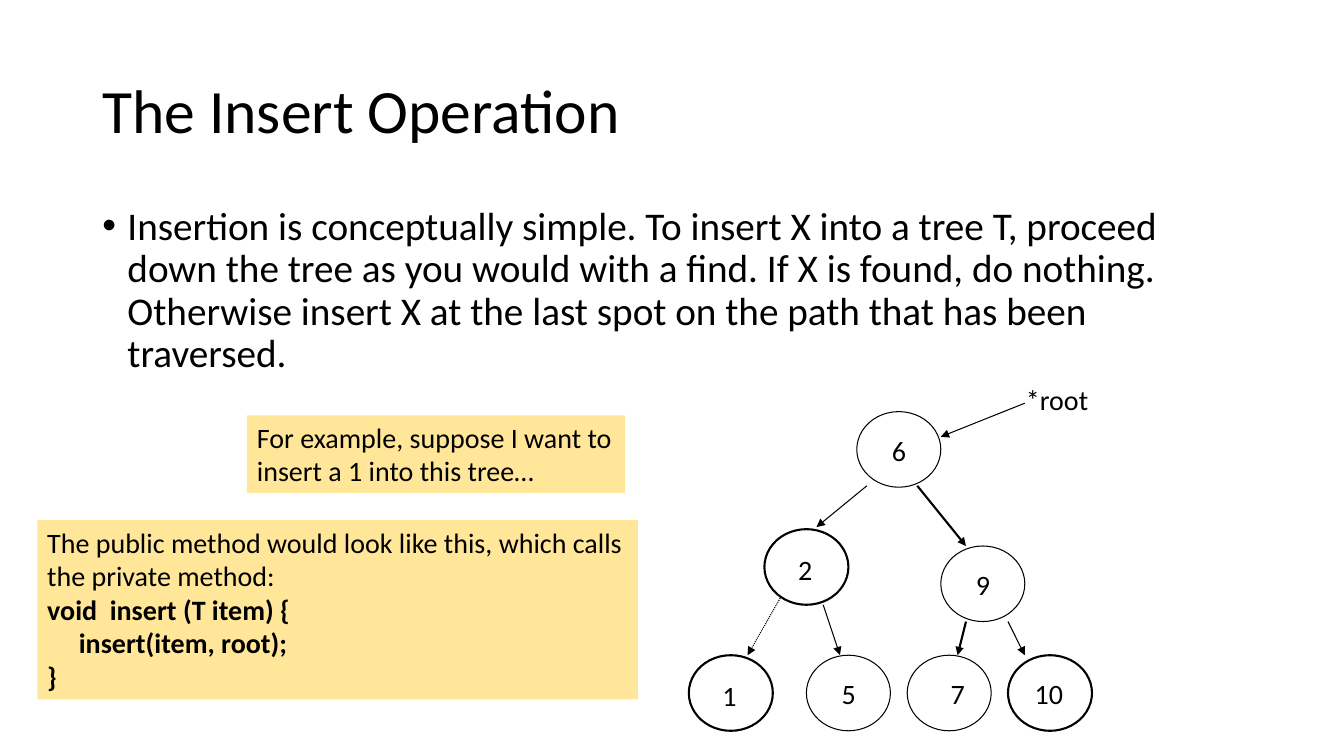
from lxml import etree
from pptx import Presentation
from pptx import util as u
from pptx.dml.color import RGBColor
from pptx.enum import dml, shapes, text
from pptx.oxml.ns import qn

COLORS = {"ink": "000000", "note": "FFE699"}
FONT = "Calibri"
NODE_W, NODE_H = 60, 54
THIN, THICK = 0.75, 1.5
LABEL_SIZE = 20

TITLE = "The Insert Operation"
BODY = ("Insertion is conceptually simple. To insert X into a tree T, proceed down the tree "
        "as you would with a find. If X is found, do nothing. Otherwise insert X at the last "
        "spot on the path that has been traversed.")

# value: (node left, node top, outline, label left, label top)
NODES = {
    "6": (612, 294, THIN, 630, 306),
    "2": (546, 378, THICK, 563, 391),
    "9": (672, 390, THIN, 690, 402),
    "1": (492, 468, THICK, 509, 481),
    "5": (576, 468, THIN, 594, 480),
    "7": (648, 468, THIN, 672, 480),
    "10": (720, 468, THICK, 732, 480),
}

# (from x, from y, to x, to y, width, dotted)
ARROWS = [
    (732, 288, 672, 312, THIN, False),
    (619.2, 347, 583.2, 376.5, THIN, False),
    (655.2, 347, 690, 390, THICK, False),
    (558, 426, 534, 468, THIN, True),
    (588, 432, 600, 468, THIN, False),
    (690, 444, 684, 468, THICK, False),
    (720, 444, 732, 468, THIN, False),
]

# (box, wrap, lines as (text, bold, indent))
NOTES = [
    ((176.4, 296.64, 270, 55.44), False, [
        ("For example, suppose I want to", False, 0),
        ("insert a 1 into this tree…", False, 0),
    ]),
    ((26.64, 371.52, 429.12, 128.16), True, [
        ("The public method would look like this, which calls the private method:", False, 0),
        ("void  insert (T item) {", True, 0),
        ("insert(item, root);", True, 22.6),
        ("}", True, 0),
    ]),
]

deck = Presentation()
deck.slide_width, deck.slide_height = u.Pt(960), u.Pt(540)
page = deck.slides.add_slide(deck.slide_layouts[6])


def color(name):
    return RGBColor.from_string(COLORS[name])


def add_text(box_at, lines, size, wrap=True):
    """Add a text box; each line is (text, bold, indent)."""
    box = page.shapes.add_textbox(*map(u.Pt, box_at))
    frame = box.text_frame
    frame.word_wrap = wrap
    for number, (words, bold, indent) in enumerate(lines):
        para = frame.add_paragraph() if number else frame.paragraphs[0]
        if indent:
            para._p.get_or_add_pPr().set("marL", str(u.Pt(indent)))
        span = para.add_run()
        span.text = words
        span.font.name, span.font.size, span.font.bold = FONT, u.Pt(size), bold
        span.font.color.rgb = color("ink")
    return box


def add_label(words, left, top, width):
    add_text((left, top, width, 31.5), [(words, False, 0)], LABEL_SIZE, wrap=False)


# Title
title = add_text((66, 28.8, 828, 104.4), [(TITLE, False, 0)], 44)
title.text_frame.vertical_anchor = text.MSO_ANCHOR.MIDDLE
title.text_frame.paragraphs[0].line_spacing = 0.9

# Bulleted body
body = add_text((66, 144, 828, 342.72), [(BODY, False, 18)], 28)
para = body.text_frame.paragraphs[0]
para.line_spacing, para.space_before = 0.9, u.Pt(10)
props = para._p.get_or_add_pPr()
props.set("indent", str(u.Pt(-18)))
etree.SubElement(props, qn("a:buFont")).set("typeface", "Arial")
etree.SubElement(props, qn("a:buChar")).set("char", "•")

# Tree arrows
for x1, y1, x2, y2, width, dotted in ARROWS:
    arrow = page.shapes.add_connector(
        shapes.MSO_CONNECTOR.STRAIGHT, *map(u.Pt, (x1, y1, x2, y2)))
    arrow.line.color.rgb = color("ink")
    arrow.line.width = u.Pt(width)
    if dotted:
        arrow.line.dash_style = dml.MSO_LINE.ROUND_DOT
    etree.SubElement(arrow.line._get_or_add_ln(), qn("a:tailEnd")).set("type", "triangle")
    etree.SubElement(arrow._element.spPr, qn("a:effectLst"))

# Tree nodes and their labels
for value, (left, top, outline, label_left, label_top) in NODES.items():
    node = page.shapes.add_shape(
        shapes.MSO_SHAPE.OVAL, *map(u.Pt, (left, top, NODE_W, NODE_H)))
    node.shadow.inherit = False
    node.fill.background()
    node.line.color.rgb = color("ink")
    node.line.width = u.Pt(outline)
    add_label(value, label_left, label_top, 14.2 + 10.2 * len(value))
add_label("*root", 725.76, 270, 59.76)

# Yellow notes
for box_at, wrap, lines in NOTES:
    note = add_text(box_at, lines, LABEL_SIZE, wrap)
    note.fill.solid()
    note.fill.fore_color.rgb = color("note")

deck.save("out.pptx")
